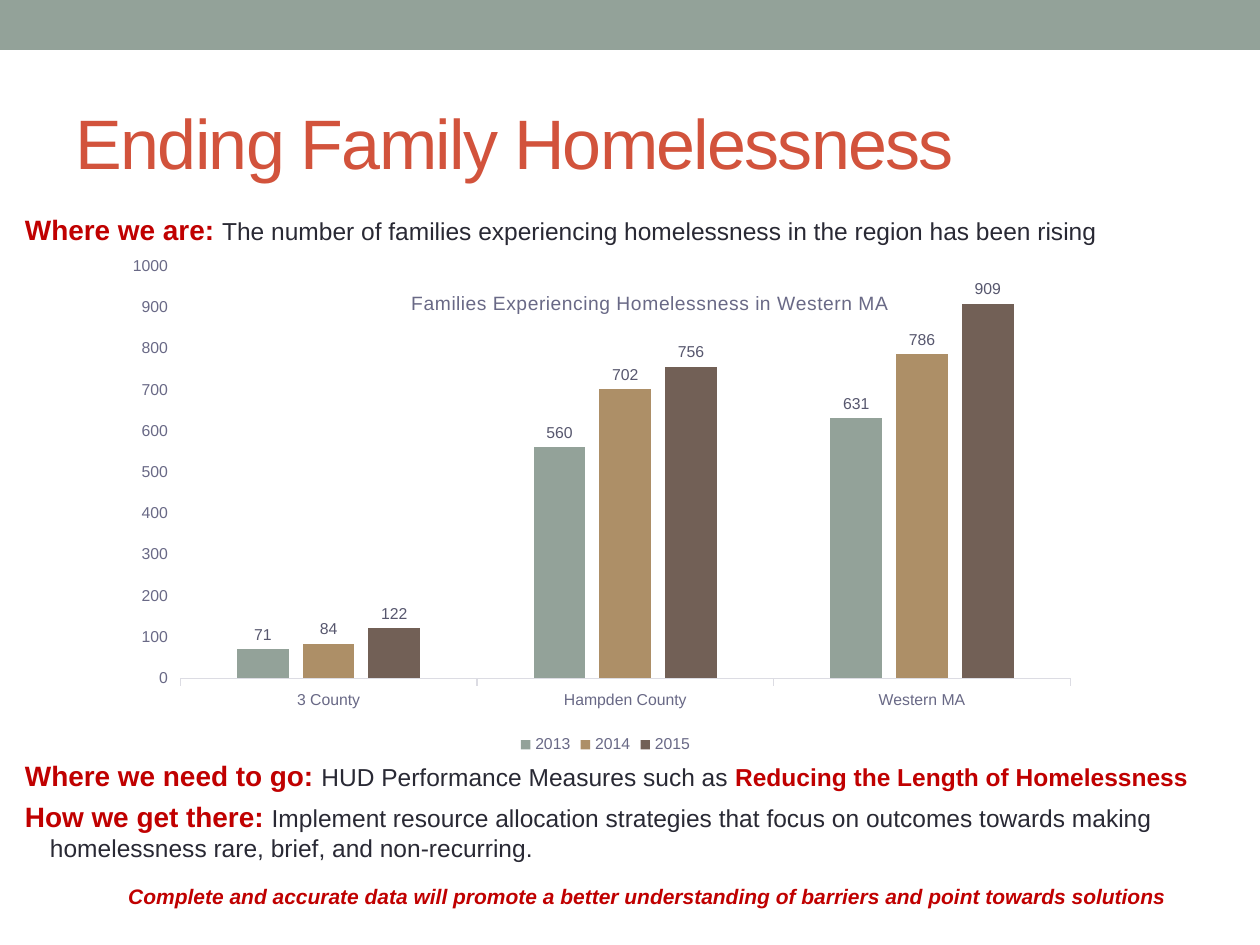
from lxml import etree
from pptx import Presentation
from pptx.chart.data import CategoryChartData
from pptx.dml.color import RGBColor
from pptx.enum.chart import XL_CHART_TYPE, XL_LABEL_POSITION, XL_LEGEND_POSITION, XL_TICK_MARK
from pptx.enum.shapes import MSO_SHAPE
from pptx.enum.text import MSO_ANCHOR, PP_ALIGN
from pptx.oxml.ns import qn
from pptx.util import Emu, Pt

FONT = "Arial"
RED, INK, AXIS = "C00000", "292934", "696986"

# Content: text runs are (text, size, colour, bold, italic)
TITLE = "Ending Family Homelessness"
WHERE_WE_ARE = [
    ("Where we are: ", 16, RED, True, False),
    ("The number of families experiencing homelessness in the region has been rising",
     14, INK, False, False),
]
WHERE_TO_GO = [
    ("Where we need to go: ", 16, RED, True, False),
    ("HUD Performance Measures such as ", 14, INK, False, False),
    ("Reducing the Length of Homelessness", 14, RED, True, False),
]
HOW = [
    ("How we get there: ", 16, RED, True, False),
    ("Implement resource allocation strategies that focus on outcomes towards making "
     "homelessness rare, brief, and non-recurring.", 14, INK, False, False),
]
CLOSING = [
    ("Complete and accurate data will promote a better understanding of barriers "
     "and point towards solutions", 12, RED, True, True),
]
CHART_TITLE = "Families Experiencing Homelessness in Western MA"
REGIONS = ["3 County", "Hampden County", "Western MA"]
SERIES = [
    ("2013", "93A299", (71, 560, 631)),
    ("2014", "AD8F67", (84, 702, 786)),
    ("2015", "726056", (122, 756, 909)),
]


def px(n):
    return Emu(round(n * 914400 / 126))


def rgb(value):
    return RGBColor.from_string(value)


def style(font, size, color, bold=False, italic=False):
    font.name, font.size, font.bold, font.italic = FONT, Pt(size), bold, italic
    font.color.rgb = rgb(color)


def add_text(s, box, paragraphs, anchor=MSO_ANCHOR.TOP):
    """Each paragraph is (runs, space before, left margin, indent, alignment)."""
    tf = s.shapes.add_textbox(*map(px, box)).text_frame
    tf.word_wrap = True
    tf.vertical_anchor = anchor
    tf.margin_left = tf.margin_right = tf.margin_top = tf.margin_bottom = 0
    for i, (runs, before, margin, indent, align) in enumerate(paragraphs):
        p = tf.add_paragraph() if i else tf.paragraphs[0]
        p.alignment = align
        if before:
            p.space_before = Pt(before)
        pPr = p._p.get_or_add_pPr()
        pPr.set("marL", str(px(margin)))
        pPr.set("indent", str(px(indent)))
        for text, *look in runs:
            r = p.add_run()
            r.text = text
            style(r.font, *look)
    return tf


def set_layout(parent, before, inner=False, **sizes):
    """Place a chart part by fractions of the chart area."""
    for old in parent.findall(qn("c:layout")):
        parent.remove(old)
    layout = etree.Element(qn("c:layout"))
    manual = etree.SubElement(layout, qn("c:manualLayout"))
    if inner:
        etree.SubElement(manual, qn("c:layoutTarget")).set("val", "inner")
    for key in ("xMode", "yMode"):
        etree.SubElement(manual, qn("c:" + key)).set("val", "edge")
    for key, value in sizes.items():
        etree.SubElement(manual, qn("c:" + key)).set("val", str(value))
    before.addprevious(layout)


def add_families_chart(s):
    data = CategoryChartData()
    data.categories = REGIONS
    for name, _, values in SERIES:
        data.add_series(name, values)
    chart = s.shapes.add_chart(XL_CHART_TYPE.COLUMN_CLUSTERED,
                               *map(px, (111, 256, 989, 503)), data).chart
    style(chart.font, 10, INK)

    # Title laid over the plot
    p = chart.chart_title.text_frame.paragraphs[0]
    r = p.add_run()
    r.text = CHART_TITLE
    style(r.font, 11, AXIS)
    r.font._element.set("spc", "20")
    chart.chart_title.include_in_layout = True
    title = chart.chart_title._element
    overlay = title.find(qn("c:overlay"))
    overlay.set("val", "1")
    set_layout(title, overlay, x=0.3, y=0.06)

    # Legend
    chart.has_legend = True
    chart.legend.position = XL_LEGEND_POSITION.BOTTOM
    chart.legend.include_in_layout = False
    style(chart.legend.font, 9, AXIS)

    # Axes
    for axis in (chart.category_axis, chart.value_axis):
        axis.has_major_gridlines = False
        axis.major_tick_mark = XL_TICK_MARK.OUTSIDE
        style(axis.tick_labels.font, 9, AXIS)
    line = chart.category_axis.format.line
    line.color.rgb = rgb("DCDCE3")
    line.width = Pt(0.75)
    values = chart.value_axis
    values.format.line.fill.background()
    values.minimum_scale, values.maximum_scale, values.major_unit = 0, 1000, 100

    # Columns and their labels
    plot = chart.plots[0]
    plot.vary_by_categories = False
    plot.gap_width, plot.overlap = 219, -27
    for series, (_, color, _) in zip(plot.series, SERIES):
        series.format.fill.solid()
        series.format.fill.fore_color.rgb = rgb(color)
        labels = series.data_labels
        labels.show_value = True
        labels.position = XL_LABEL_POSITION.OUTSIDE_END
        style(labels.font, 9, "57576E")
    set_layout(plot._element.getparent(), plot._element, inner=True,
               x=0.07, y=0.02, w=0.9, h=0.82)


def main():
    prs = Presentation()
    prs.slide_width, prs.slide_height = px(1260), px(945)
    s = prs.slides.add_slide(prs.slide_layouts[6])

    # Top band
    sp = s.shapes.add_shape(MSO_SHAPE.RECTANGLE, *map(px, (0, 0, 1260, 50)))
    sp.shadow.inherit = False
    sp.fill.solid()
    sp.fill.fore_color.rgb = rgb("93A299")
    sp.line.fill.background()

    # Title with tightened letters
    tf = add_text(s, (76, 73, 1108, 136),
                  [([(TITLE, 40, "D2533C")], 0, 0, 0, PP_ALIGN.LEFT)], MSO_ANCHOR.MIDDLE)
    tf.paragraphs[0].runs[0].font._element.set("spc", "-100")

    # Statements around the chart
    hanging = (25, -25, PP_ALIGN.LEFT)
    add_text(s, (25, 213, 1207, 34), [(WHERE_WE_ARE, 0, *hanging)])
    add_families_chart(s)
    add_text(s, (25, 759, 1207, 147), [
        (WHERE_TO_GO, 0, *hanging),
        (HOW, 4, *hanging),
        (CLOSING, 12, 38, 0, PP_ALIGN.CENTER),
    ])

    prs.save("out.pptx")


if __name__ == "__main__":
    main()
